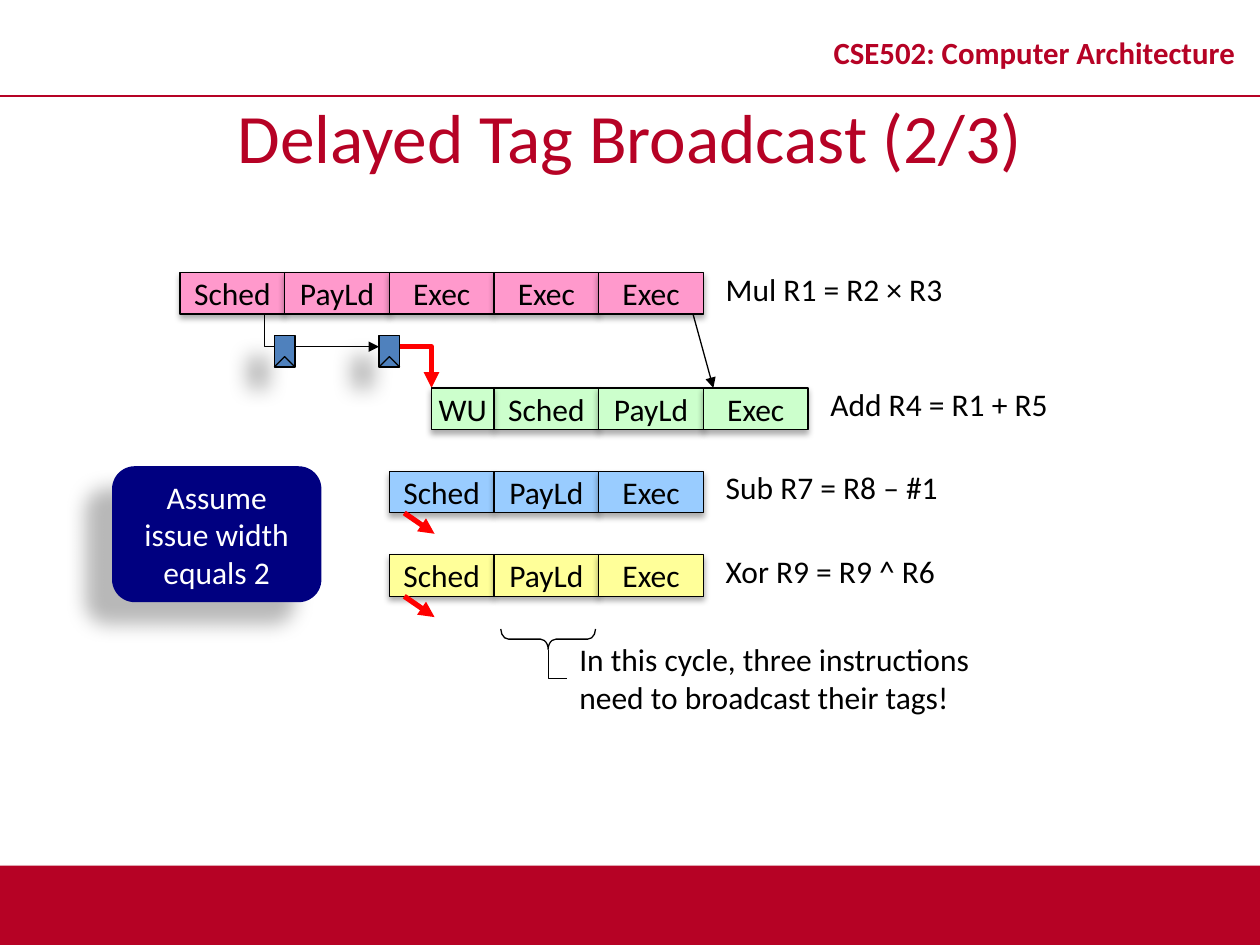
from lxml.etree import SubElement
from pptx import Presentation
from pptx.dml.color import RGBColor
from pptx.enum.shapes import MSO_CONNECTOR, MSO_SHAPE
from pptx.enum.text import MSO_ANCHOR, MSO_AUTO_SIZE, PP_ALIGN
from pptx.oxml.ns import qn
from pptx.util import Cm, Pt

CRIMSON = RGBColor(0xB6, 0x02, 0x25)
BLACK = RGBColor(0, 0, 0)
WHITE = RGBColor(0xFF, 0xFF, 0xFF)
RED = RGBColor(0xFF, 0, 0)
NAVY = RGBColor(0, 0, 0x80)
STEEL = RGBColor(0x4F, 0x81, 0xBD)
PINK = RGBColor(0xFF, 0x99, 0xCC)
GREEN = RGBColor(0xCC, 0xFF, 0xCC)
SKY = RGBColor(0x99, 0xCC, 0xFF)
YELLOW = RGBColor(0xFF, 0xFF, 0x99)

# Shadows: opacity %, blur pt, distance pt, direction in degrees
BAR_SHADOW = (35, 3.1, 1.8, 90)
CELL_SHADOW = (32, 3.5, 2.2, 90)
DEEP_SHADOW = (28, 11.8, 19.7, 141)

SLIDE_W, SLIDE_H = 25.4, 19.05
CELL_W, CELL_H = 2.11, 0.84
WAKEUP_W = 1.26
REG_W, REG_H = 0.42, 0.64
PIPE_X, PIPE_Y = 3.63, 5.49
ADD_Y, SUB_Y, XOR_Y = 7.82, 9.5, 11.18
WIRE_Y = 6.99


def column(i):
    return PIPE_X + i * CELL_W


def write(sp, lines, size=18, color=BLACK, bold=False, align=PP_ALIGN.CENTER,
          anchor=MSO_ANCHOR.MIDDLE, wrap=False, spacing=None):
    tf = sp.text_frame
    tf.word_wrap = wrap
    tf.vertical_anchor = anchor
    for i, line in enumerate(lines):
        p = tf.add_paragraph() if i else tf.paragraphs[0]
        p.alignment = align
        p.line_spacing = spacing
        r = p.add_run()
        r.text = line
        font = {"name": "Calibri", "size": Pt(size), "bold": bold}
        for key, value in font.items():
            setattr(r.font, key, value)
        r.font.color.rgb = color


def add_text(s, x, y, w, h, lines, **text_format):
    sp = s.shapes.add_textbox(Cm(x), Cm(y), Cm(w), Cm(h))
    write(sp, lines, **text_format)
    return sp


def add_note(s, x, y, w, h, lines):
    sp = add_text(s, x, y, w, h, lines, align=PP_ALIGN.LEFT, anchor=MSO_ANCHOR.TOP)
    sp.text_frame.auto_size = MSO_AUTO_SIZE.SHAPE_TO_FIT_TEXT
    return sp


def add_block(s, kind, x, y, w, h, fill=None, line=BLACK, shadow=None):
    sp = s.shapes.add_shape(kind, Cm(x), Cm(y), Cm(w), Cm(h))
    sp.shadow.inherit = False
    if fill is None:
        sp.fill.background()
    else:
        sp.fill.solid()
        sp.fill.fore_color.rgb = fill
    if line is None:
        sp.line.fill.background()
    else:
        set_line(sp, line)
    if shadow:
        opacity, blur, dist, angle = shadow
        effects = sp._element.spPr.find(qn("a:effectLst"))
        outer = SubElement(effects, qn("a:outerShdw"), blurRad=str(Pt(blur)),
                           dist=str(Pt(dist)), dir=str(angle * 60000), rotWithShape="0")
        clr = SubElement(outer, qn("a:srgbClr"), val=str(BLACK))
        SubElement(clr, qn("a:alpha"), val=str(opacity * 1000))
    return sp


def set_line(sp, color=BLACK, width=0.75, arrow=False):
    sp.line.color.rgb = color
    sp.line.width = Pt(width)
    if arrow:
        SubElement(sp.line._get_or_add_ln(), qn("a:tailEnd"), type="triangle")


def add_line(s, start, end, kind=MSO_CONNECTOR.STRAIGHT, **line_format):
    ends = [Cm(v) for v in (*start, *end)]
    cxn = s.shapes.add_connector(kind, *ends)
    set_line(cxn, **line_format)
    SubElement(cxn._element.spPr, qn("a:effectLst"))
    return cxn


def add_path(s, points, **line_format):
    start, *rest = [(Cm(x), Cm(y)) for x, y in points]
    builder = s.shapes.build_freeform(*start, scale=1.0)
    builder.add_line_segments(rest, close=False)
    sp = builder.convert_to_shape()
    sp.shadow.inherit = False
    sp.fill.background()
    set_line(sp, **line_format)


def add_frame(s, w, h):
    """Footer bar, header rule, course name and title."""
    bar_h = 1.6
    add_block(s, MSO_SHAPE.RECTANGLE, 0, h - bar_h, w, bar_h, CRIMSON, None, BAR_SHADOW)
    add_line(s, (0, 1.93), (w, 1.93), color=CRIMSON, width=1)
    add_text(s, w - 9.09, 0.33, 9.09, bar_h, ["CSE502: Computer Architecture"],
             size=17.6, color=CRIMSON, bold=True, wrap=True, spacing=0.8)
    add_text(s, 0, 1.93, w, bar_h, ["Delayed Tag Broadcast (2/3)"],
             size=39.6, color=CRIMSON, wrap=True)


def add_stage(s, x, y, w, name, fill):
    sp = add_block(s, MSO_SHAPE.RECTANGLE, x, y, w, CELL_H, fill, shadow=CELL_SHADOW)
    write(sp, [name])


def add_instruction(s, x, y, stages, fill, label):
    for i, name in enumerate(stages):
        add_stage(s, x + i * CELL_W, y, CELL_W, name, fill)
    add_note(s, x + len(stages) * CELL_W + 0.2, y - 0.18, 5.3, 1.02, [label])


def add_register(s, x, y):
    """Pipeline register with its clock notch, centred on x."""
    left, right, bottom = x - REG_W / 2, x + REG_W / 2, y + REG_H
    add_block(s, MSO_SHAPE.RECTANGLE, left, y, REG_W, REG_H, STEEL, shadow=DEEP_SHADOW)
    add_path(s, [(left, bottom), (x, bottom - REG_W / 2), (right, bottom)])


def add_tag_delay(s):
    """Wires and registers that carry the tag from Mul to the wakeup stage."""
    first, second = column(1), column(2)
    wakeup_x = column(3) - WAKEUP_W
    add_path(s, [(5.33, PIPE_Y + CELL_H), (5.33, WIRE_Y), (second - REG_W / 2, WIRE_Y)],
             arrow=True)
    for x in (first, second):
        add_register(s, x, 6.76)
    add_path(s, [(second + REG_W / 2, WIRE_Y), (wakeup_x, WIRE_Y), (wakeup_x, ADD_Y)],
             color=RED, width=3, arrow=True)
    for y in (SUB_Y, XOR_Y):
        bottom = y + CELL_H
        add_line(s, (8.15, bottom), (8.76, bottom + 0.42), color=RED, width=3, arrow=True)


def add_assumption(s, x, y, w, h):
    sp = add_block(s, MSO_SHAPE.ROUNDED_RECTANGLE, x, y, w, h, NAVY, None, DEEP_SHADOW)
    write(sp, ["Assume", "issue width", "equals 2"], color=WHITE)


def add_cycle_note(s, x, y):
    """Brace over one cycle, tied to its note; x, y is the brace's top centre."""
    depth, span = 0.41, 1.91
    brace = add_block(s, MSO_SHAPE.RIGHT_BRACE, x - depth / 2, y + depth / 2 - span / 2,
                      depth, span)
    brace.rotation = 90
    brace.adjustments[0] = 0.38
    note = add_note(s, x + 0.38, y + 0.1, 8.48, 1.78,
                    ["In this cycle, three instructions", "need to broadcast their tags!"])
    cxn = add_line(s, (x, y + depth), (x + 0.38, y + 1), MSO_CONNECTOR.ELBOW)
    cxn.begin_connect(brace, 1)
    cxn.end_connect(note, 1)
    box = {"left": x - 0.1, "top": y + 0.52, "width": 0.58, "height": 0.37}
    for key, value in box.items():
        setattr(cxn, key, Cm(value))
    spPr = cxn._element.spPr
    xfrm = spPr.find(qn("a:xfrm"))
    xfrm.attrib.pop("flipV", None)
    xfrm.set("flipH", "1")
    xfrm.set("rot", str(270 * 60000))
    spPr.find(qn("a:prstGeom")).set("prst", "bentConnector2")


def main():
    prs = Presentation()
    prs.slide_width, prs.slide_height = Cm(SLIDE_W), Cm(SLIDE_H)
    s = prs.slides.add_slide(prs.slide_layouts[6])
    add_frame(s, SLIDE_W, SLIDE_H)
    stages = ["Sched", "PayLd", "Exec"]
    for col, y, names, fill, label in [
        (3, ADD_Y, stages, GREEN, "Add R4 = R1 + R5"),
        (0, PIPE_Y, stages + ["Exec"] * 2, PINK, "Mul R1 = R2 × R3"),
        (2, SUB_Y, stages, SKY, "Sub R7 = R8 – #1"),
        (2, XOR_Y, stages, YELLOW, "Xor R9 = R9 ^ R6"),
    ]:
        add_instruction(s, column(col), y, names, fill, label)
    add_line(s, (13.97, PIPE_Y + CELL_H), (14.38, ADD_Y), arrow=True)
    add_tag_delay(s)
    add_stage(s, column(3) - WAKEUP_W, ADD_Y, WAKEUP_W, "WU", GREEN)
    add_assumption(s, 2.26, 9.4, 4.22, 2.74)
    add_cycle_note(s, 11.05, 12.68)
    prs.save("out.pptx")


if __name__ == "__main__":
    main()
